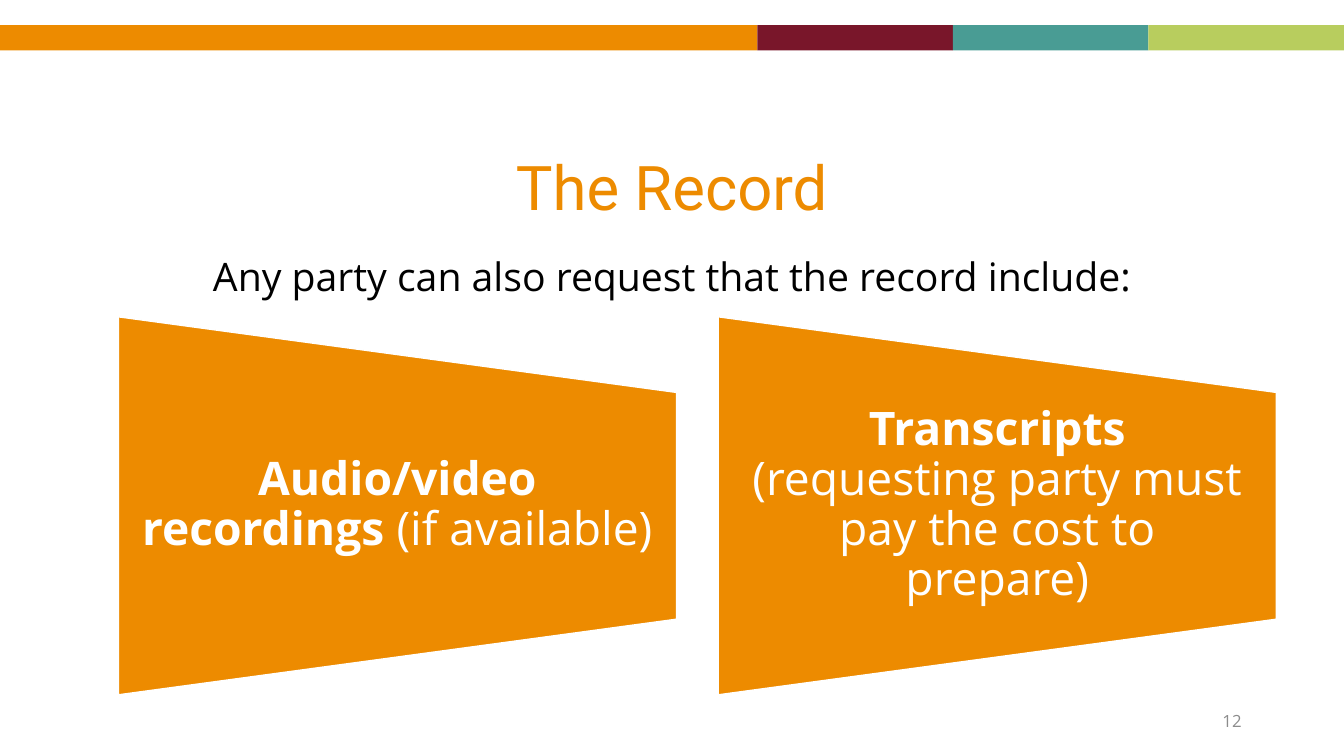
from pptx import Presentation
from pptx.dml.color import RGBColor
from pptx.enum.shapes import MSO_SHAPE
from pptx.enum.text import MSO_ANCHOR, PP_ALIGN
from pptx.util import Pt

ORANGE = RGBColor(0xED, 0x8B, 0x00)
MAROON = RGBColor(0x79, 0x16, 0x2A)
TEAL = RGBColor(0x49, 0x9C, 0x94)
LIME = RGBColor(0xB8, 0xCD, 0x5E)
GRAY = RGBColor(0x8C, 0x8C, 0x8C)
BLACK = RGBColor(0, 0, 0)
WHITE = RGBColor(255, 255, 255)


class SlideBuilder:
    heading_font = "Roboto"
    body_font = "Open Sans"

    def __init__(self, slide):
        self.slide = slide

    def style(self, paragraph, size, color, font, align):
        paragraph.alignment = align
        paragraph.font.size = Pt(size)
        paragraph.font.name = font
        paragraph.font.color.rgb = color

    def title(self, text, left, top, width, height):
        shape = self.slide.shapes.title
        shape.left, shape.top = Pt(left), Pt(top)
        shape.width, shape.height = Pt(width), Pt(height)
        frame = shape.text_frame
        frame.text = text
        frame.vertical_anchor = MSO_ANCHOR.MIDDLE
        paragraph = frame.paragraphs[0]
        paragraph.line_spacing = 0.9
        self.style(paragraph, 44, ORANGE, self.heading_font, PP_ALIGN.CENTER)

    def shape(self, kind, left, top, width, height, color):
        shape = self.slide.shapes.add_shape(kind, Pt(left), Pt(top), Pt(width), Pt(height))
        shape.shadow.inherit = False
        shape.fill.solid()
        shape.fill.fore_color.rgb = color
        shape.line.fill.background()
        return shape

    def text(self, runs, left, top, width, height, size, color, align=PP_ALIGN.CENTER,
             anchor=MSO_ANCHOR.MIDDLE, spacing=0.9, insets=(7.2, 3.6)):
        box = self.slide.shapes.add_textbox(Pt(left), Pt(top), Pt(width), Pt(height))
        frame = box.text_frame
        frame.word_wrap = True
        frame.vertical_anchor = anchor
        frame.margin_left = frame.margin_right = Pt(insets[0])
        frame.margin_top = frame.margin_bottom = Pt(insets[1])
        paragraph = frame.paragraphs[0]
        paragraph.line_spacing = spacing
        self.style(paragraph, size, color, self.body_font, align)
        for words, bold in runs:
            run = paragraph.add_run()
            run.text = words
            if bold:
                run.font.bold = True

    def card(self, runs, left, top, width, height):
        offset = (width - height) / 2
        panel = self.shape(MSO_SHAPE.FLOWCHART_MANUAL_OPERATION,
                           left + offset, top - offset, height, width, ORANGE)
        panel.rotation = 270
        panel.line.color.rgb = WHITE
        panel.line.width = Pt(1)
        self.text(runs, left, top + height / 5, width, height * 3 / 5, 33, WHITE,
                  insets=(16.5, 0))


def main():
    presentation = Presentation()
    presentation.slide_width, presentation.slide_height = Pt(960), Pt(540)
    builder = SlideBuilder(presentation.slides.add_slide(presentation.slide_layouts[5]))

    left = 0
    for color, width in ((ORANGE, 541), (MAROON, 139.67), (TEAL, 139.67), (LIME, 139.66)):
        builder.shape(MSO_SHAPE.RECTANGLE, left, 18, width, 18, color)
        left += width

    builder.title("The Record", 66, 84, 828, 104.4)
    builder.text([("Any party can also request that the record include:", False)],
                 66, 180.7, 828, 41, 28, BLACK, anchor=MSO_ANCHOR.TOP)

    cards = (
        [("Audio/video recordings ", True), ("(if available)", False)],
        [("Transcripts ", True), ("(requesting party must pay the cost to prepare)", False)],
    )
    for index, runs in enumerate(cards):
        builder.card(runs, 84.6 + index * 428.5, 226.3, 398.6, 270)

    builder.text([("12", False)], 678, 500.5, 216, 28.8, 12, GRAY,
                 align=PP_ALIGN.RIGHT, spacing=1.0)
    presentation.save("out.pptx")


if __name__ == "__main__":
    main()
